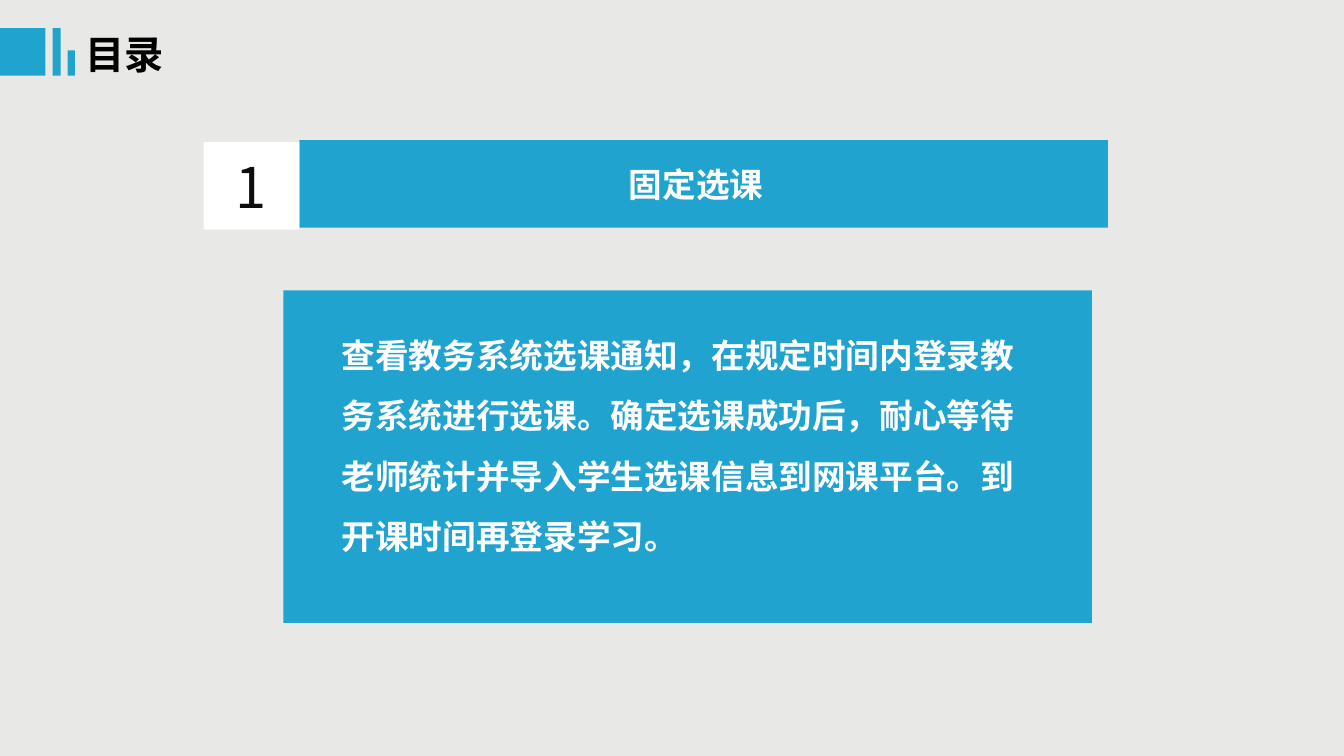
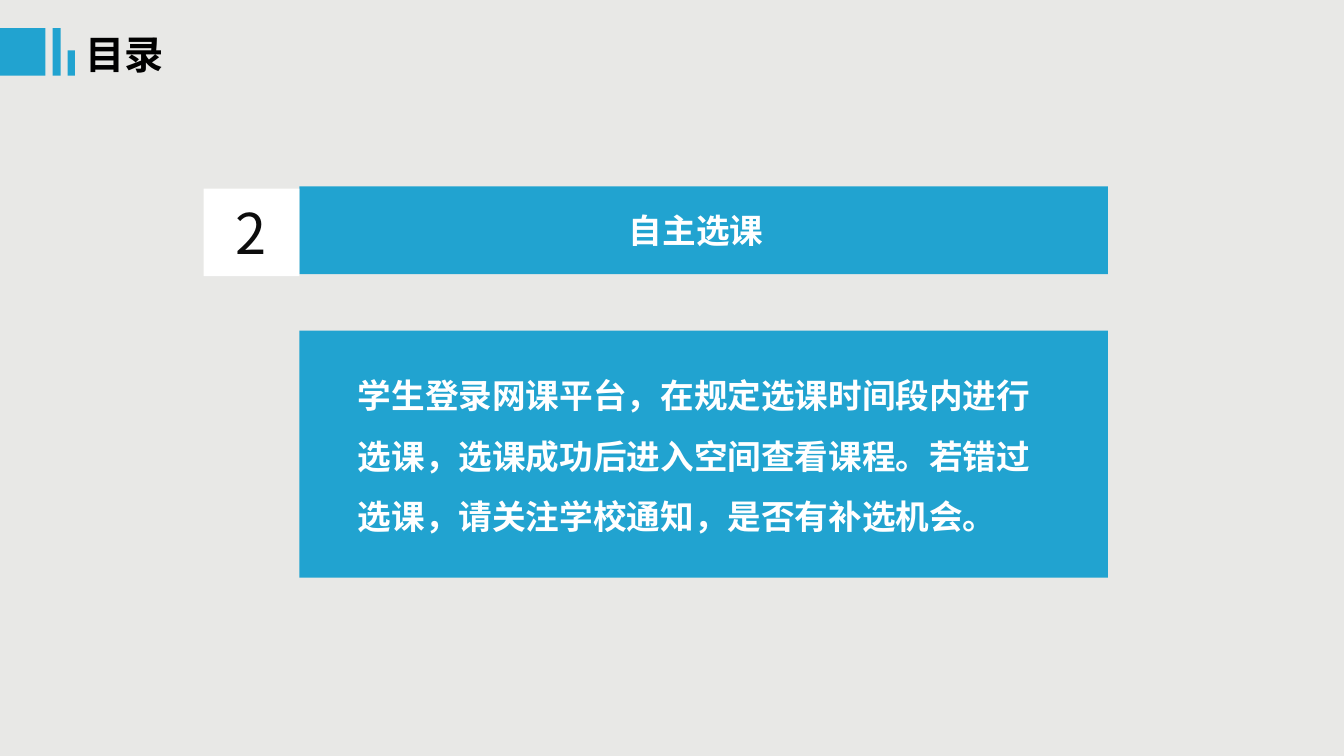
from lxml.etree import SubElement
from pptx import Presentation
from pptx.dml.color import RGBColor
from pptx.enum.shapes import MSO_SHAPE
from pptx.enum.text import MSO_ANCHOR, MSO_AUTO_SIZE, PP_ALIGN
from pptx.oxml.ns import qn
from pptx.util import Inches, Pt

WIDTH, HEIGHT = Inches(13.33), Inches(7.5)
FONT = "Noto Sans CJK SC"
BLUE, WHITE, BLACK, INK, PAPER = "21A3D0", "FFFFFF", "000000", "0D0D0D", "E8E8E6"

# Places are percentages of the slide's width and height.
BAR_LEFT, BAR_WIDTH, BAR_HEIGHT = 22.28, 60.16, 11.6
NUMBER_WIDTH, NUMBER_DROP = 7.13, 0.27
MARK_BOTTOM, MARK_GAP = 10, 0.53
MARKS = [(3.38, 6.27), (0.6, 6.27), (0.53, 3.33)]

TOPICS = [
    dict(number="1", heading="固定选课", bar_top=18.53,
         panel=(21.08, 38.4, BAR_WIDTH, 44),
         text="查看教务系统选课通知，在规定时间内登录教务系统进行选课。确定选课成功后，"
              "耐心等待老师统计并导入学生选课信息到网课平台。到开课时间再登录学习。"),
    dict(number="2", heading="自主选课", bar_top=24.67,
         panel=(BAR_LEFT, 43.73, BAR_WIDTH, 32.67),
         text="学生登录网课平台，在规定选课时间段内进行选课，选课成功后进入空间查看课程。"
              "若错过选课，请关注学校通知，是否有补选机会。"),
]


def color(hex_value):
    return RGBColor.from_string(hex_value)


def share(left, top, width, height):
    """Turn percentages of the slide into lengths."""
    return [round(whole * part / 100) for whole, part in
            zip((WIDTH, HEIGHT, WIDTH, HEIGHT), (left, top, width, height))]


def move(placeholder, *place):
    (placeholder.left, placeholder.top,
     placeholder.width, placeholder.height) = share(*place)


def paint(shape, hex_value):
    shape.fill.solid()
    shape.fill.fore_color.rgb = color(hex_value)


def write(shape, text, size, hex_value, bold=True,
          align=PP_ALIGN.LEFT, anchor=MSO_ANCHOR.TOP):
    frame = shape.text_frame
    frame.text = text
    frame.word_wrap = True
    frame.auto_size = MSO_AUTO_SIZE.NONE
    frame.vertical_anchor = anchor
    paragraph = frame.paragraphs[0]
    paragraph.alignment = align
    for run in paragraph.runs:
        run.font.size, run.font.bold, run.font.name = Pt(size), bold, FONT
        run.font.color.rgb = color(hex_value)
        SubElement(run.font._element, qn("a:ea"), typeface=FONT)
    return paragraph


def add_block(slide, hex_value, *place):
    block = slide.shapes.add_shape(MSO_SHAPE.RECTANGLE, *share(*place))
    block.shadow.inherit = False
    block.line.fill.background()
    paint(block, hex_value)
    return block


def add_header(slide):
    left = 0
    for width, height in MARKS:
        add_block(slide, BLUE, left, MARK_BOTTOM - height, width, height)
        left += width + MARK_GAP
    write(slide.shapes.title, "目录", 28, BLACK)


def add_heading(slide, number, heading, top):
    bar = add_block(slide, BLUE, BAR_LEFT, top, BAR_WIDTH, BAR_HEIGHT)
    bar.text_frame.margin_right = Inches(0.25)
    badge = add_block(slide, WHITE, BAR_LEFT - NUMBER_WIDTH, top + NUMBER_DROP,
                      NUMBER_WIDTH, BAR_HEIGHT)
    centred = dict(align=PP_ALIGN.CENTER, anchor=MSO_ANCHOR.MIDDLE)
    write(bar, heading, 24, WHITE, **centred)
    write(badge, number, 40, INK, bold=False, **centred)


def fill_panel(panel, text, place):
    move(panel, *place)
    paint(panel, BLUE)
    frame = panel.text_frame
    frame.margin_left, frame.margin_right = Inches(0.58), Inches(0.46)
    frame.margin_top = Inches(0.24)
    paragraph = write(panel, text, 24, WHITE)
    paragraph.line_spacing = 1.5
    paragraph.space_before = Pt(0)
    properties = paragraph._p.get_or_add_pPr()
    properties.set("marL", "0")
    properties.set("indent", "0")
    SubElement(properties, qn("a:buNone"))


def main():
    deck = Presentation()
    deck.slide_width, deck.slide_height = WIDTH, HEIGHT
    paint(deck.slide_master.background, PAPER)
    layout = deck.slide_layouts[1]
    move(layout.placeholders[0], 5.63, 3.33, 9.53, 7.6)
    for topic in TOPICS:
        slide = deck.slides.add_slide(layout)
        add_header(slide)
        add_heading(slide, topic["number"], topic["heading"], topic["bar_top"])
        fill_panel(slide.placeholders[1], topic["text"], topic["panel"])
    deck.save("out.pptx")


if __name__ == "__main__":
    main()
